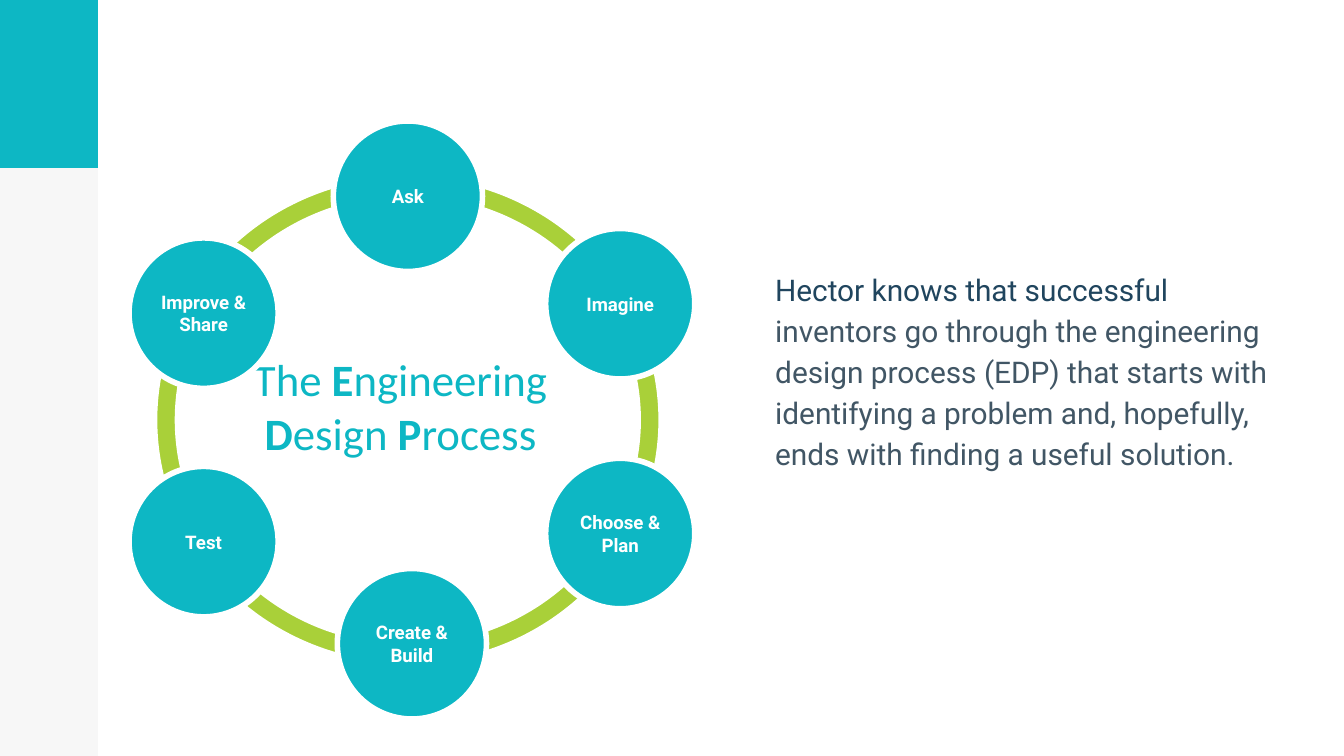
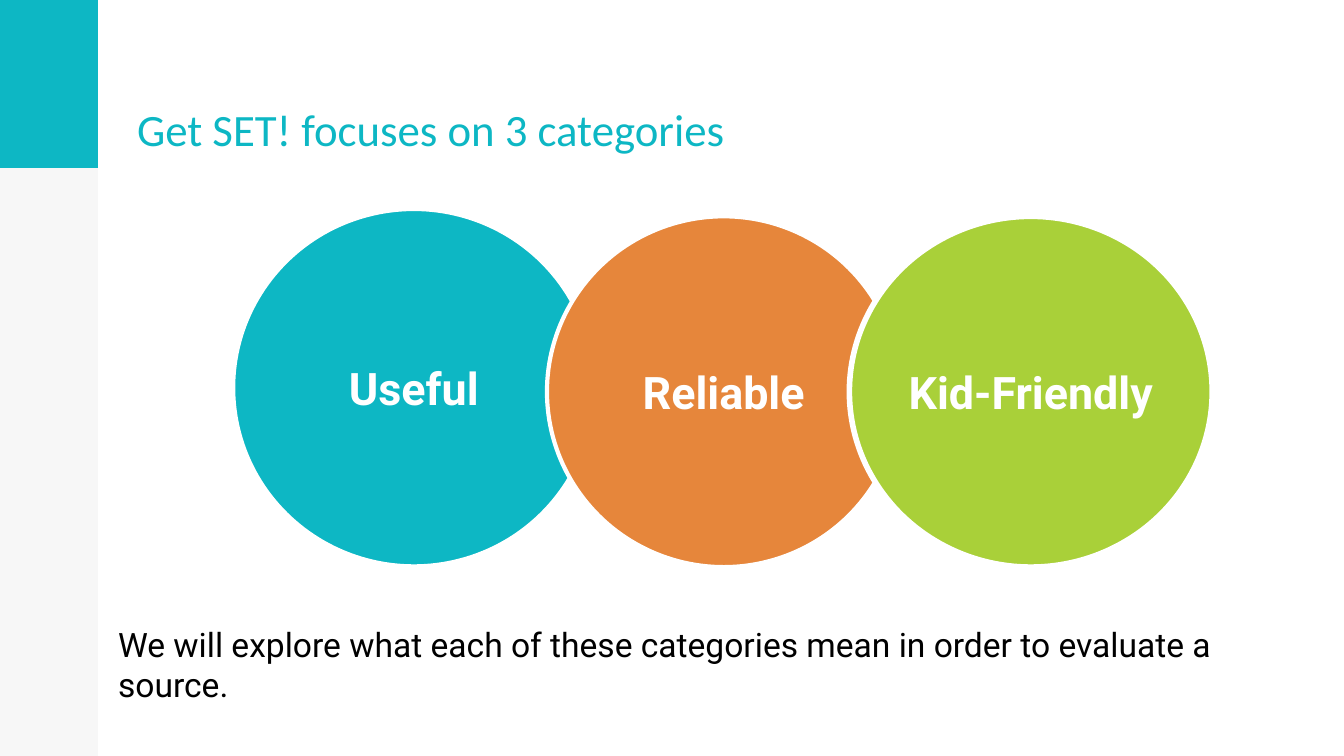
from lxml import etree
from pptx import Presentation
from pptx.dml.color import RGBColor
from pptx.enum.shapes import MSO_SHAPE as SHAPE
from pptx.enum.text import MSO_ANCHOR as ANCHOR, MSO_AUTO_SIZE as AUTO, PP_ALIGN as ALIGN
from pptx.oxml.ns import qn
from pptx.util import Pt

PX = 9144
COLORS = {
    "teal": "0DB7C4",
    "green": "A9D039",
    "orange": "E6863B",
    "white": "FFFFFF",
    "black": "000000",
    "navy": "20455E",
    "slate": "415665",
}
HEADING, BODY = "Calibri", "Roboto"
TITLE_ONLY = 5
PAD = 10


def rgb(name):
    return RGBColor.from_string(COLORS[name])


def px(*lengths):
    return [n * PX for n in lengths]


def write(tf, runs, font, size, color, align=ALIGN.LEFT, anchor=ANCHOR.TOP, bold=None, side=PAD):
    tf.word_wrap = True
    tf.auto_size = AUTO.NONE
    tf.vertical_anchor = anchor
    tf.margin_left = tf.margin_right = side * PX
    tf.margin_top = tf.margin_bottom = PAD * PX
    p = tf.paragraphs[0]
    p.alignment = align
    p.font.name = font
    p.font.size = Pt(size)
    p.font.bold = bold
    p.font.color.rgb = rgb(color)
    for text in runs:
        p.add_run().text = text
    return p


def add_shape(slide, kind, box, fill, line=None):
    sp = slide.shapes.add_shape(kind, *px(*box))
    sp.shadow.inherit = False
    sp.fill.solid()
    sp.fill.fore_color.rgb = rgb(fill)
    if line:
        sp.line.color.rgb = rgb("white")
        sp.line.width = Pt(line)
    else:
        sp.line.fill.background()
    return sp


def add_circle(slide, box, label, fill, size, line=3):
    sp = add_shape(slide, SHAPE.OVAL, box, fill, line)
    write(sp.text_frame, [label], BODY, size, "white", ALIGN.CENTER, ANCHOR.MIDDLE, True, side=0)


def add_text(slide, box, runs, size, color):
    sp = slide.shapes.add_textbox(*px(*box))
    return write(sp.text_frame, runs, BODY, size, color)


def set_title(slide, box, runs, align, anchor):
    sp = slide.shapes.title
    sp.left, sp.top, sp.width, sp.height = px(*box)
    return write(sp.text_frame, runs, HEADING, 24, "teal", align, anchor)


def add_side_band(slide, height):
    band = add_shape(slide, SHAPE.RECTANGLE, (0, 0, 73, 1), "black")
    band.height = height
    color = band.element.spPr.find(qn("a:solidFill"))[0]
    etree.SubElement(color, qn("a:alpha")).set("val", "3000")
    add_shape(slide, SHAPE.RECTANGLE, (0, 0, 73, 125), "teal")


def new_slide(prs):
    slide = prs.slides.add_slide(prs.slide_layouts[TITLE_ONLY])
    add_side_band(slide, prs.slide_height)
    return slide


def add_process_ring(slide, left, top):
    steps = [
        ("Ask", 152, 0),
        ("Imagine", 310, 80),
        ("Choose & Plan", 310, 251),
        ("Create & Build", 155, 333),
        ("Test", 0, 257),
        ("Improve & Share", 0, 87),
    ]
    ring = add_shape(slide, SHAPE.DONUT, (left + 19, top + 40, 377, 365), "green", 3)
    ring.adjustments[0] = 0.047
    for label, x, y in steps:
        add_circle(slide, (left + x, top + y, 111, 112), label, "teal", 10)
    runs = ["The ", "E", "ngineering ", "D", "esign ", "P", "rocess"]
    p = set_title(slide, (left + 82, top + 162, 240, 101), runs, ALIGN.CENTER, ANCHOR.TOP)
    for r in p.runs:
        r.font.bold = len(r.text) == 1


def add_categories(slide, left, top):
    categories = [
        ("Useful", "teal", 0, 0, 270, 267, 3),
        ("Reliable", "orange", 234, 6, 263, 261, 2.25),
        ("Kid-Friendly", "green", 459, 6, 270, 261, 3),
    ]
    for label, fill, x, y, width, height, line in categories:
        add_circle(slide, (left + x, top + y, width, height), label, fill, 24, line)


def build_process_slide(prs):
    slide = new_slide(prs)
    add_process_ring(slide, 96, 90)
    runs = [
        "Hector knows that successful ",
        "inventors go through the engineering design process (EDP) that starts with "
        "identifying a problem and, hopefully, ends with finding a useful solution.",
    ]
    p = add_text(slide, (567, 188, 404, 250), runs, 16, "slate")
    p.runs[0].font.color.rgb = rgb("navy")
    p.line_spacing = 1.15
    p.space_before = Pt(13)
    p.space_after = Pt(2)


def build_categories_slide(prs):
    slide = new_slide(prs)
    set_title(slide, (92, 1, 524, 125), ["Get SET! focuses on 3 categories"], ALIGN.LEFT, ANCHOR.BOTTOM)
    add_categories(slide, 173, 155)
    summary = "We will explore what each of these categories mean in order to evaluate a source."
    add_text(slide, (78, 454, 889, 50), [summary], 18, "black")


def main():
    prs = Presentation()
    prs.slide_width = 1000 * PX
    prs.slide_height = prs.slide_width * 9 // 16
    build_process_slide(prs)
    build_categories_slide(prs)
    prs.save("out.pptx")


if __name__ == "__main__":
    main()
